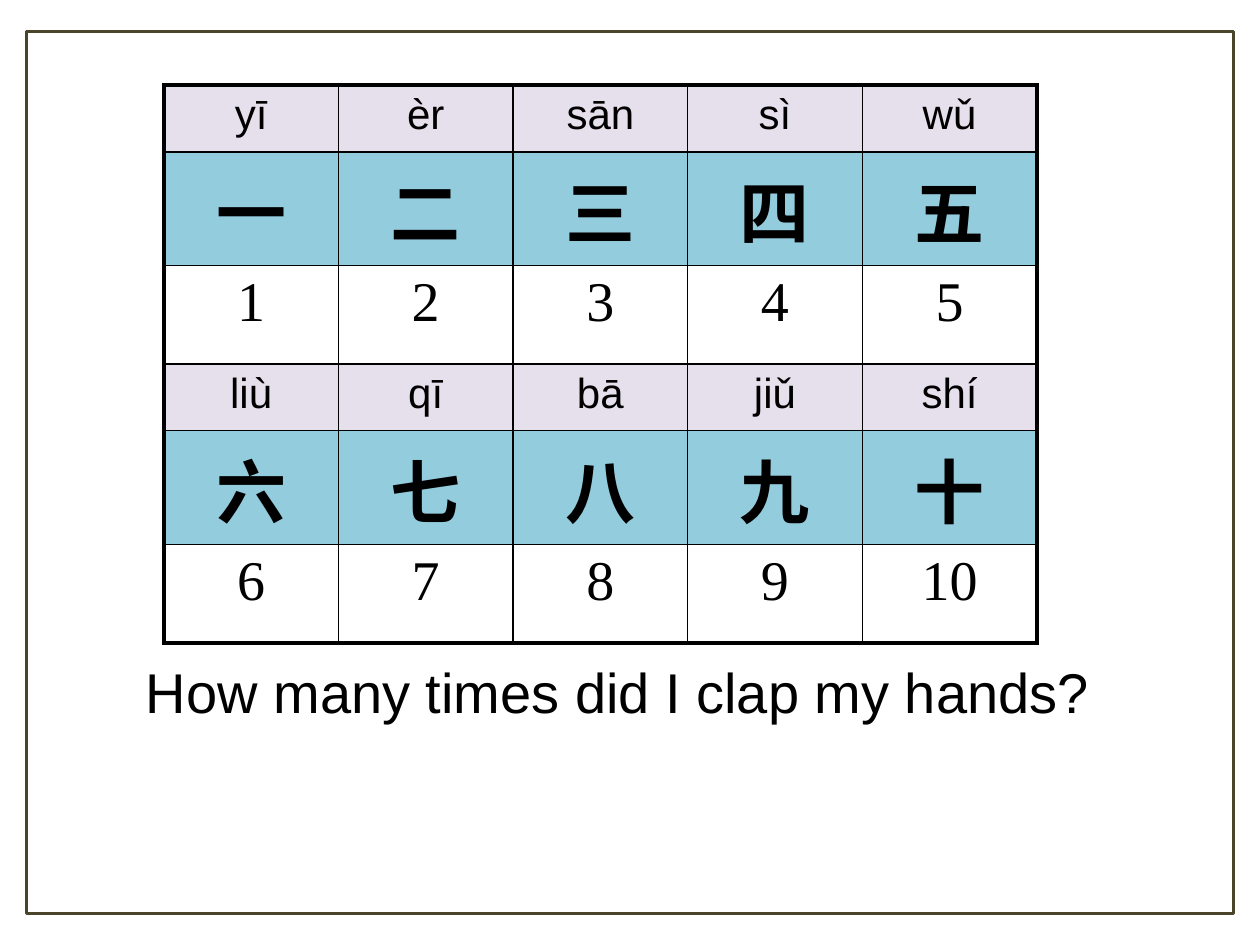
import pptx
import pptx.dml.color
import pptx.enum.shapes
import pptx.enum.text
import pptx.oxml
import pptx.oxml.ns
import pptx.util

WIDTH, HEIGHT = 10, 7.5
COLORS = {
    "ink": "000000",
    "pinyin": "E6E0EC",
    "character": "93CDDD",
    "frame": "4A452A",
}
# Format of each kind of table row; heights are in inches
ROW_KINDS = {
    "pinyin": {"height": 0.53, "size": 24, "font": "Arial"},
    "character": {"height": 0.82, "size": 40, "font": "Noto Sans CJK SC", "bold": True},
    "numeral": {"height": 0.78, "size": 32, "font": "Times New Roman"},
}
NUMBER_ROWS = [
    ("pinyin", ["yī", "èr", "sān", "sì", "wǔ"]),
    ("character", list("一二三四五")),
    ("numeral", ["1", "2", "3", "4", "5"]),
    ("pinyin", ["liù", "qī", "bā", "jiǔ", "shí"]),
    ("character", list("六七八九十")),
    ("numeral", ["6", "7", "8", "9", "10"]),
]
OUTER_BORDER, INNER_BORDER = 2.25, 1


def inches(*lengths):
    return [pptx.util.Inches(length) for length in lengths]


def rgb(name):
    return pptx.dml.color.RGBColor.from_string(COLORS[name])


def write_text(text_frame, text, *, size, font="Arial", bold=False, align="LEFT"):
    paragraph = text_frame.paragraphs[0]
    paragraph.alignment = getattr(pptx.enum.text.PP_ALIGN, align)
    paragraph.space_before = pptx.util.Pt(0)
    run = paragraph.add_run()
    run.text = text
    run.font.size = pptx.util.Pt(size)
    run.font.bold = bold
    run.font.color.rgb = rgb("ink")
    run.font.name = font
    # East Asian glyphs take their typeface from a separate element
    east_asian = pptx.oxml.parse_xml(
        f'<a:ea {pptx.oxml.ns.nsdecls("a")} typeface="{font}"/>')
    run.font._element.append(east_asian)


def set_borders(cell, widths):
    properties = cell._tc.get_or_add_tcPr()
    for side, width in widths.items():
        properties.append(pptx.oxml.parse_xml(
            f'<a:ln{side} {pptx.oxml.ns.nsdecls("a")} w="{pptx.util.Pt(width)}">'
            f'<a:solidFill><a:srgbClr val="{COLORS["ink"]}"/></a:solidFill>'
            f'</a:ln{side}>'))


def add_number_table(slide, left, top, width):
    row_count, column_count = len(NUMBER_ROWS), len(NUMBER_ROWS[0][1])
    height = sum(ROW_KINDS[kind]["height"] for kind, _ in NUMBER_ROWS)
    table = slide.shapes.add_table(
        row_count, column_count, *inches(left, top, width, height)).table
    table.first_row = table.horz_banding = False
    for column in table.columns:
        column.width = pptx.util.Inches(width / column_count)

    for row_index, (kind, texts) in enumerate(NUMBER_ROWS):
        text_format = dict(ROW_KINDS[kind])
        table.rows[row_index].height = pptx.util.Inches(text_format.pop("height"))
        for column_index, text in enumerate(texts):
            cell = table.cell(row_index, column_index)
            cell.margin_left = cell.margin_right = pptx.util.Inches(0.07)
            cell.margin_top = cell.margin_bottom = pptx.util.Inches(0.05)
            on_edge = {
                "L": column_index == 0,
                "R": column_index == column_count - 1,
                "T": row_index == 0,
                "B": row_index == row_count - 1,
            }
            set_borders(cell, {side: OUTER_BORDER if outer else INNER_BORDER
                               for side, outer in on_edge.items()})
            if kind in COLORS:
                cell.fill.solid()
                cell.fill.fore_color.rgb = rgb(kind)
            else:
                cell.fill.background()
            write_text(cell.text_frame, text, align="CENTER", **text_format)


def add_question(slide, left, top, width, height):
    text_box = slide.shapes.add_textbox(*inches(left, top, width, height))
    text_box.text_frame.word_wrap = True
    text_box.text_frame.auto_size = pptx.enum.text.MSO_AUTO_SIZE.SHAPE_TO_FIT_TEXT
    write_text(text_box.text_frame, "How many times did I clap my hands?", size=32)


def add_frame(slide, left, top, width, height):
    frame = slide.shapes.add_shape(
        pptx.enum.shapes.MSO_SHAPE.RECTANGLE, *inches(left, top, width, height))
    frame.shadow.inherit = False
    frame.fill.background()
    frame.line.color.rgb = rgb("frame")
    frame.line.width = pptx.util.Pt(2)


def main():
    presentation = pptx.Presentation()
    presentation.slide_width, presentation.slide_height = inches(WIDTH, HEIGHT)
    slide = presentation.slides.add_slide(presentation.slide_layouts[6])

    # Numbers one to ten
    add_number_table(slide, 0.13 * WIDTH, 0.09 * HEIGHT, 0.693 * WIDTH)
    # Question below the table
    add_question(slide, 1.06, 5.17, 8.78, 0.64)
    # Border around the slide
    margin_x, margin_y = 0.21, 0.25
    add_frame(slide, margin_x, margin_y, WIDTH - 2 * margin_x, HEIGHT - 2 * margin_y)

    presentation.save("out.pptx")


if __name__ == "__main__":
    main()
